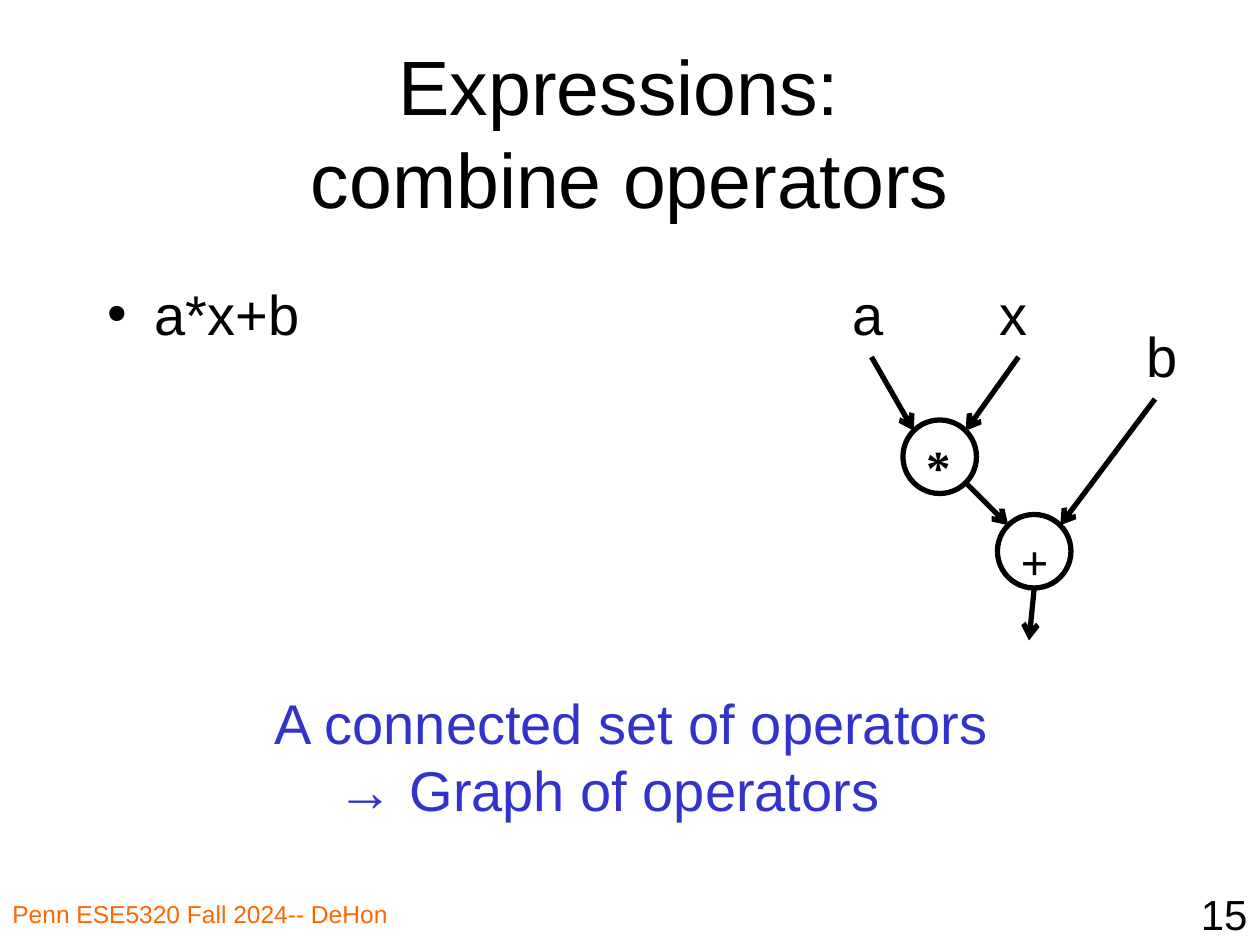
from dataclasses import dataclass
from math import sqrt

from lxml import etree
from pptx import Presentation
from pptx.dml.color import RGBColor
from pptx.enum.shapes import MSO_CONNECTOR, MSO_SHAPE
from pptx.enum.text import MSO_ANCHOR, MSO_AUTO_SIZE, PP_ALIGN
from pptx.oxml.ns import qn
from pptx.util import Pt

LEFT, CENTER, RIGHT = PP_ALIGN.LEFT, PP_ALIGN.CENTER, PP_ALIGN.RIGHT
TOP, MIDDLE = MSO_ANCHOR.TOP, MSO_ANCHOR.MIDDLE
FIXED = MSO_AUTO_SIZE.NONE
STRAIGHT, OVAL = MSO_CONNECTOR.STRAIGHT, MSO_SHAPE.OVAL


@dataclass(frozen=True)
class Theme:
    font: str = "Arial"
    node_font: str = "Times New Roman"
    ink: RGBColor = RGBColor(0x00, 0x00, 0x00)
    accent: RGBColor = RGBColor(0x33, 0x33, 0xCC)
    footer: RGBColor = RGBColor(0xFF, 0x66, 0x00)
    title_size: int = 44
    text_size: int = 32
    node_size: int = 28
    number_size: int = 24
    footer_size: int = 14
    line_width: int = 3


class SlideBuilder:
    def __init__(self, slide, theme):
        self.s, self.theme = slide, theme

    def set_text(self, sp, lines, size, color=None, font=None, bold=False,
                 align=LEFT, anchor=TOP, wrap=True):
        tf = sp.text_frame
        frame_format = {"word_wrap": wrap, "auto_size": FIXED, "vertical_anchor": anchor}
        for name, value in frame_format.items():
            setattr(tf, name, value)
        tf.text = "\n".join(lines)
        font_format = {"name": font or self.theme.font, "size": Pt(size), "bold": bold}
        for p in tf.paragraphs:
            p.alignment = align
            for r in p.runs:
                for name, value in font_format.items():
                    setattr(r.font, name, value)
                r.font.color.rgb = color or self.theme.ink
        return tf

    def place(self, sp, box):
        for name, value in zip(("left", "top", "width", "height"), box):
            setattr(sp, name, Pt(value))

    def title(self, text, box):
        sp = self.s.shapes.title
        self.place(sp, box)
        self.set_text(sp, [text], self.theme.title_size, align=CENTER, anchor=MIDDLE)

    def bullets(self, lines, box, indent=27):
        sp = self.s.placeholders[1]
        self.place(sp, box)
        for p in self.set_text(sp, lines, self.theme.text_size).paragraphs:
            pPr = p._p.get_or_add_pPr()
            pPr.set("marL", str(Pt(indent)))
            pPr.set("indent", str(Pt(-indent)))
            etree.SubElement(pPr, qn("a:buChar")).set("char", "•")

    def text(self, lines, box, size, **style):
        sp = self.s.shapes.add_textbox(*map(Pt, box))
        self.set_text(sp, lines, size, **style)

    def node(self, symbol, cx, cy, radius):
        sp = self.s.shapes.add_shape(OVAL, Pt(cx - radius), Pt(cy - radius),
                                     Pt(2 * radius), Pt(2 * radius))
        sp.shadow.inherit = False
        sp.fill.background()
        sp.line.color.rgb = self.theme.ink
        sp.line.width = Pt(self.theme.line_width)
        self.set_text(sp, [symbol], self.theme.node_size,
                      font=self.theme.node_font, bold=True)

    def arrow(self, start, end):
        cxn = self.s.shapes.add_connector(STRAIGHT, *map(Pt, start + end))
        cxn.line.color.rgb = self.theme.ink
        cxn.line.width = Pt(self.theme.line_width)
        spPr = cxn._element.spPr
        etree.SubElement(spPr.get_or_add_ln(), qn("a:tailEnd")).set("type", "arrow")
        etree.SubElement(spPr, qn("a:effectLst"))


def main():
    prs = Presentation()
    prs.slide_width, prs.slide_height = Pt(720), Pt(540)
    theme = Theme()
    b = SlideBuilder(prs.slides.add_slide(prs.slide_layouts[1]), theme)

    # Footer and slide number
    b.text(["Penn ESE5320 Fall 2024-- DeHon"], (0, 510, 276, 30),
           theme.footer_size, color=theme.footer)
    b.text(["15"], (570, 504, 150, 36), theme.number_size, align=RIGHT)

    # Title, expression and conclusion
    b.title("Expressions: \vcombine operators", (54, 30, 612, 90))
    b.bullets(["a*x+b"], (54, 156, 270, 324))
    b.text(["A connected set of operators", "\t→ Graph of operators"],
           (150, 390, 422, 84), theme.text_size, color=theme.accent, wrap=False)

    # Operator nodes
    radius = 21
    multiply, add = (537, 261), (591, 315)
    for symbol, center in (("*", multiply), ("+", add)):
        b.node(symbol, *center, radius)

    def rim(center, dx, dy):
        """Point on a node's circle in a diagonal direction."""
        return tuple(c + d * radius / sqrt(2) for c, d in zip(center, (dx, dy)))

    # Operands, each with an arrow into its operator
    operands = (
        ("a", (480, 156), (498, 204), rim(multiply, -1, -1)),
        ("x", (564, 156), (582, 204), rim(multiply, 1, -1)),
        ("b", (648, 180), (660, 228), rim(add, 1, -1)),
    )
    for name, corner, start, end in operands:
        b.text([name], corner + (42, 46), theme.text_size)
        b.arrow(start, end)

    # Product into the sum, and the result out
    b.arrow(rim(multiply, 1, 1), rim(add, -1, -1))
    b.arrow((add[0], add[1] + radius), (588, 366))

    prs.save("out.pptx")


if __name__ == "__main__":
    main()
